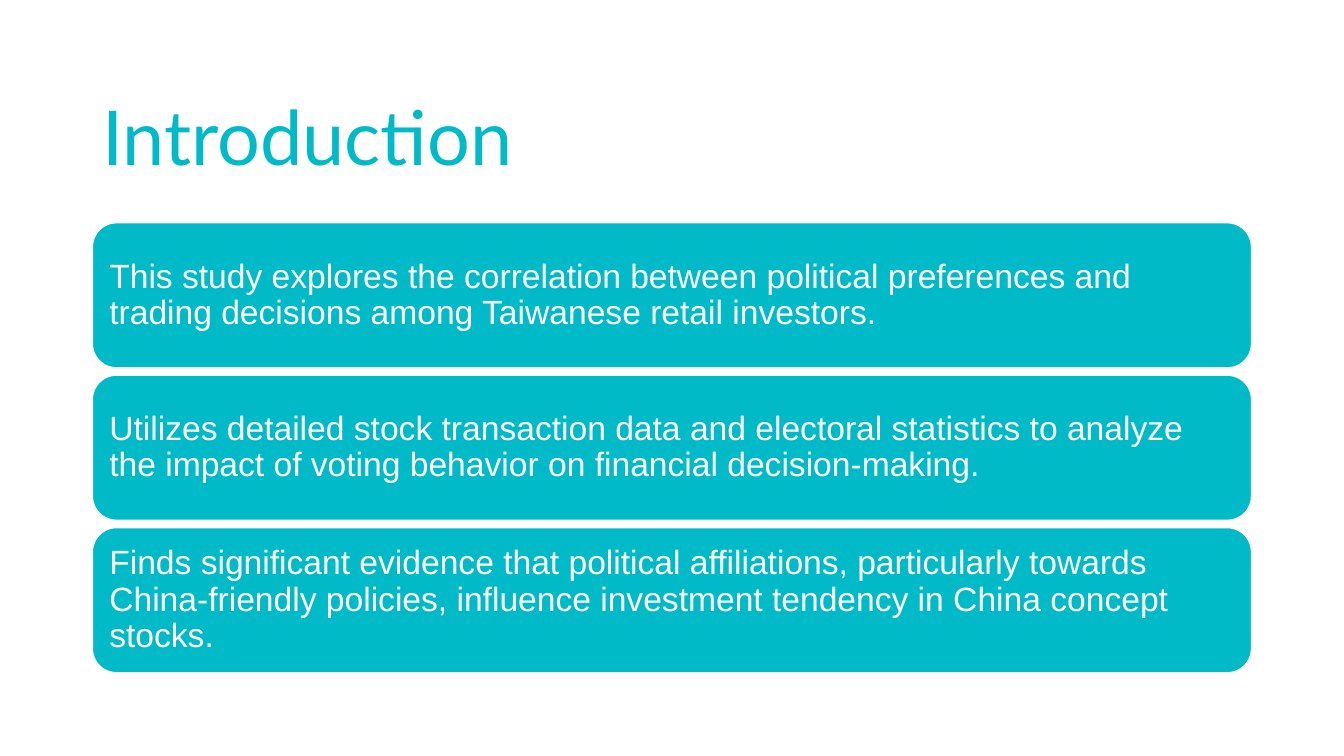
import pptx
import pptx.util
import pptx.dml.color
import pptx.enum.shapes
import pptx.enum.text

Pt = pptx.util.Pt
ANCHOR = pptx.enum.text.MSO_ANCHOR
COLORS = {"teal": "00BAC8", "white": "FFFFFF"}
LEFT, WIDTH = 66, 828
CARD_TOP, CARD_HEIGHT, CARD_PITCH = 159.1, 103.7, 108.9
FINDINGS = [
    "This study explores the correlation between political preferences and "
    "trading decisions among Taiwanese retail investors.",
    "Utilizes detailed stock transaction data and electoral statistics to analyze "
    "the impact of voting behavior on financial decision-making.",
    "Finds significant evidence that political affiliations, particularly towards "
    "China-friendly policies, influence investment tendency in China concept stocks.",
]


def rgb(name):
    return pptx.dml.color.RGBColor.from_string(COLORS[name])


def write_text(sp, text, *, font, size, color, anchor, inset_x=7.2, inset_y=7.2):
    tf = sp.text_frame
    tf.word_wrap = True
    tf.vertical_anchor = anchor
    tf.margin_left = tf.margin_right = Pt(inset_x)
    tf.margin_top = tf.margin_bottom = Pt(inset_y)
    p = tf.paragraphs[0]
    p.alignment = pptx.enum.text.PP_ALIGN.LEFT
    p.line_spacing = 0.9
    r = p.add_run()
    r.text = text
    r.font.name = font
    r.font.size = Pt(size)
    r.font.color.rgb = rgb(color)


def add_title(s, text):
    sp = s.shapes.add_textbox(Pt(LEFT), Pt(28.8), Pt(WIDTH), Pt(104.4))
    write_text(sp, text, font="Lato", size=54, color="teal",
               anchor=ANCHOR.BOTTOM, inset_y=3.6)


def add_card(s, top, text):
    sp = s.shapes.add_shape(pptx.enum.shapes.MSO_SHAPE.ROUNDED_RECTANGLE,
                            Pt(LEFT), Pt(top), Pt(WIDTH), Pt(CARD_HEIGHT))
    sp.shadow.inherit = False
    sp.fill.solid()
    sp.fill.fore_color.rgb = rgb("teal")
    sp.line.color.rgb = rgb("white")
    sp.line.width = Pt(1)
    write_text(sp, text, font="Arial", size=24, color="white", anchor=ANCHOR.MIDDLE)


def main():
    prs = pptx.Presentation()
    prs.slide_width, prs.slide_height = Pt(960), Pt(540)
    s = prs.slides.add_slide(prs.slide_layouts[6])
    add_title(s, "Introduction")
    for i, text in enumerate(FINDINGS):
        add_card(s, CARD_TOP + i * CARD_PITCH, text)
    prs.save("out.pptx")


if __name__ == "__main__":
    main()
